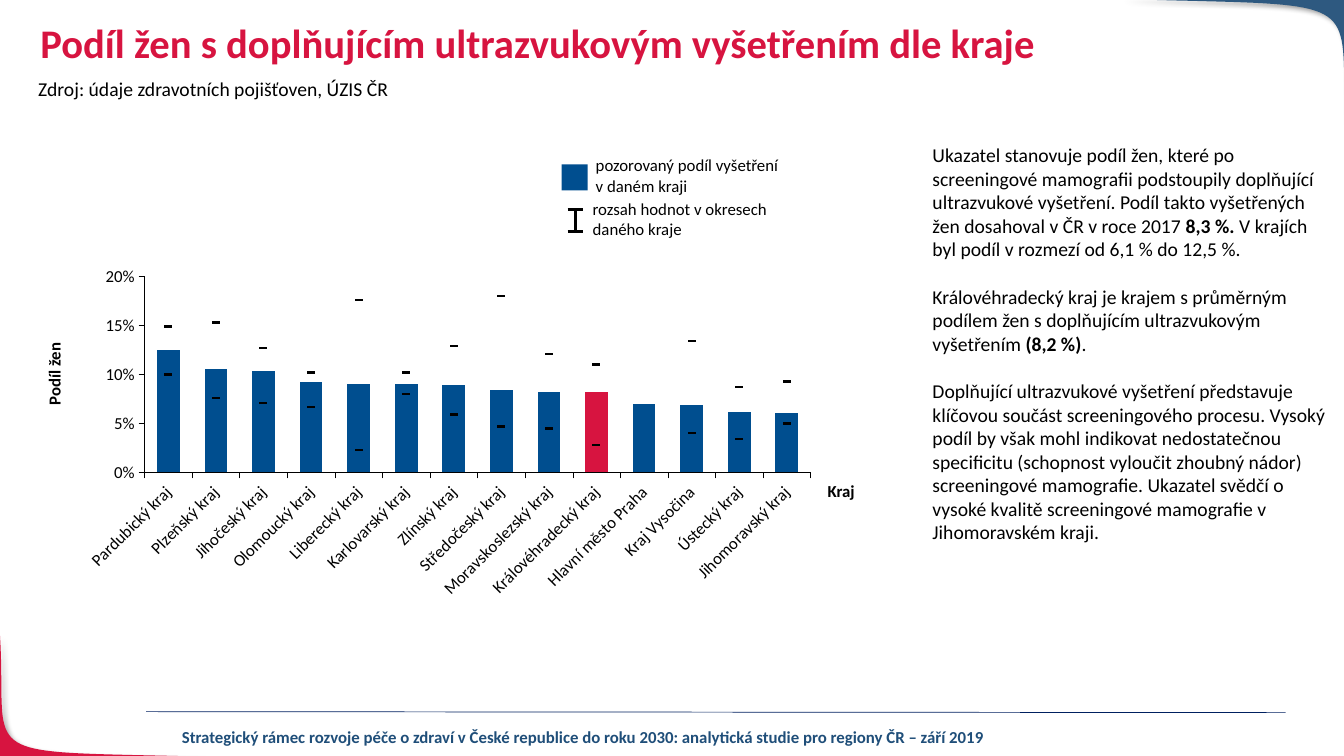
from lxml.etree import SubElement
from pptx import Presentation
from pptx.chart.data import CategoryChartData
from pptx.dml.color import RGBColor
from pptx.enum.chart import XL_CHART_TYPE, XL_MARKER_STYLE, XL_TICK_MARK
from pptx.enum.shapes import MSO_CONNECTOR, MSO_SHAPE
from pptx.enum.text import MSO_ANCHOR, MSO_AUTO_SIZE, PP_ALIGN
from pptx.oxml import parse_xml
from pptx.oxml.ns import nsdecls, qn
from pptx.util import Inches, Pt

FONT = "Calibri"
BLACK, RED, BLUE = "000000", "D71440", "004E8F"
TITLE = "Podíl žen s doplňujícím ultrazvukovým vyšetřením dle kraje"
SOURCE = "Zdroj: údaje zdravotních pojišťoven, ÚZIS ČR"
FOOTER = ("Strategický rámec rozvoje péče o zdraví v České republice do roku 2030: "
          "analytická studie pro regiony ČR – září 2019")
COMMENTARY = [
    [("Ukazatel stanovuje podíl žen, které po screeningové mamografii podstoupily doplňující "
      "ultrazvukové vyšetření. Podíl takto vyšetřených žen dosahoval v ČR v roce 2017 ", False),
     ("8,3 %. ", True),
     ("V krajích byl podíl v rozmezí od 6,1 % do 12,5 %.", False)],
    [("Královéhradecký kraj je krajem s průměrným podílem žen s doplňujícím ultrazvukovým "
      "vyšetřením ", False),
     ("(8,2 %)", True),
     (".", False)],
    [("Doplňující ultrazvukové vyšetření představuje klíčovou součást screeningového procesu. "
      "Vysoký podíl by však mohl indikovat nedostatečnou specificitu (schopnost vyloučit zhoubný "
      "nádor) screeningové mamografie. Ukazatel svědčí o vysoké kvalitě screeningové mamografie "
      "v Jihomoravském kraji.", False)],
]
REGIONS = [
    ("Pardubický kraj", 0.125, 0.1, 0.149),
    ("Plzeňský kraj", 0.106, 0.076, 0.153),
    ("Jihočeský kraj", 0.103, 0.071, 0.127),
    ("Olomoucký kraj", 0.092, 0.067, 0.102),
    ("Liberecký kraj", 0.09, 0.023, 0.176),
    ("Karlovarský kraj", 0.09, 0.08, 0.102),
    ("Zlínský kraj", 0.089, 0.059, 0.129),
    ("Středočeský kraj", 0.084, 0.047, 0.18),
    ("Moravskoslezský kraj", 0.082, 0.045, 0.121),
    ("Královéhradecký kraj", 0.082, 0.028, 0.11),
    ("Hlavní město Praha", 0.07, None, None),
    ("Kraj Vysočina", 0.069, 0.04, 0.134),
    ("Ústecký kraj", 0.062, 0.034, 0.087),
    ("Jihomoravský kraj", 0.061, 0.05, 0.093),
]
HIGHLIGHTED = "Královéhradecký kraj"
PLOT_LAYOUT = {"x": 0.142, "y": 0.029, "w": 0.828, "h": 0.461}
CORNERS = [
    (RED, [(2.13, 7.51), (-0.34, 7.44), (0.08, 7.59), (0, 6.3)], (-0.01, 7.51)),
    ("2E5980", [(11.11, -0.01), (13.7, 0.07), (13.26, -0.1), (13.35, 1.42)], (13.35, -0.01)),
]
RANGE_LINES = [
    (5.71, 2.08, 5.71, 2.3),
    (5.63, 2.08, 5.78, 2.08),
    (5.63, 2.3, 5.78, 2.3),
]


def color(value):
    return RGBColor.from_string(value)


def style_font(font, size, bold=None, value=BLACK):
    font.name, font.size, font.bold = FONT, Pt(size), bold
    font.color.rgb = color(value)


def add_text(shapes, box, runs, size=12, bold=None, value=BLACK, align=PP_ALIGN.LEFT):
    shape = shapes.add_textbox(*map(Inches, box))
    shape.text_frame.word_wrap = True
    paragraph = shape.text_frame.paragraphs[0]
    paragraph.text = runs
    paragraph.alignment = align
    style_font(paragraph.font, size, bold, value)
    return shape


def add_line(shapes, ends, width, value=BLACK):
    line = shapes.add_connector(MSO_CONNECTOR.STRAIGHT, *map(Inches, ends))
    line.line.color.rgb = color(value)
    line.line.width = Pt(width)
    SubElement(line._element.spPr, qn("a:effectLst"))


def curve_point(controls, t):
    weights = ((1 - t) ** 3, 3 * t * (1 - t) ** 2, 3 * t ** 2 * (1 - t), t ** 3)
    return tuple(Inches(sum(w * point[axis] for w, point in zip(weights, controls)))
                 for axis in (0, 1))


def add_corner(shapes, fill, controls, corner):
    points = [curve_point(controls, step / 40) for step in range(41)]
    builder = shapes.build_freeform(*points[0])
    builder.add_line_segments(points[1:] + [tuple(map(Inches, corner))], close=True)
    shape = builder.convert_to_shape()
    shape.fill.solid()
    shape.fill.fore_color.rgb = color(fill)
    shape.line.fill.background()
    shape._element.spPr.append(parse_xml(
        f'<a:effectLst {nsdecls("a")}><a:outerShdw blurRad="{Pt(4)}" dist="{Pt(3)}" dir="2700000">'
        '<a:srgbClr val="000000"><a:alpha val="40000"/></a:srgbClr></a:outerShdw></a:effectLst>'))


def move_ranges_to_lines(chart):
    plot_area = chart._chartSpace.chart.plotArea
    bars = plot_area.find(qn("c:barChart"))
    lines = parse_xml(f'<c:lineChart {nsdecls("c")}><c:grouping val="standard"/>'
                      '<c:varyColors val="0"/></c:lineChart>')
    for series in bars.findall(qn("c:ser"))[1:]:
        for invert in series.findall(qn("c:invertIfNegative")):
            series.remove(invert)
        lines.append(series)
    SubElement(lines, qn("c:marker")).set("val", "1")
    for axis in bars.findall(qn("c:axId")):
        SubElement(lines, qn("c:axId")).set("val", axis.get("val"))
    bars.addnext(lines)
    for layout in plot_area.findall(qn("c:layout")):
        plot_area.remove(layout)
    sizes = "".join(f'<c:{key} val="{value}"/>' for key, value in PLOT_LAYOUT.items())
    plot_area.insert(0, parse_xml(
        f'<c:layout {nsdecls("c")}><c:manualLayout><c:layoutTarget val="inner"/>'
        f'<c:xMode val="edge"/><c:yMode val="edge"/>{sizes}</c:manualLayout></c:layout>'))


def add_region_chart(shapes):
    names, *columns = zip(*REGIONS)
    data = CategoryChartData(number_format="0.0%")
    data.categories = names
    for number, values in enumerate(columns, 1):
        data.add_series(f"Series {number}", values)
    chart = shapes.add_chart(XL_CHART_TYPE.COLUMN_CLUSTERED, Inches(0.3), Inches(2.62),
                             Inches(7.98), Inches(4.22), data).chart
    chart.has_legend = chart.has_title = False
    style_font(chart.font, 13.1, True)
    chart.font.name = "TeX Gyre Schola"
    for axis in (chart.category_axis, chart.value_axis):
        axis.has_major_gridlines = False
        axis.major_tick_mark = XL_TICK_MARK.OUTSIDE
        axis.minor_tick_mark = XL_TICK_MARK.NONE
        axis.format.line.color.rgb = color(BLACK)
        axis.format.line.width = Pt(0.25)
        style_font(axis.tick_labels.font, 12, False)
    chart.category_axis._element.find(qn("c:txPr")).find(qn("a:bodyPr")).set("rot", "-2700000")
    value_axis = chart.value_axis
    value_axis.minimum_scale, value_axis.maximum_scale = 0, 0.2
    value_axis.major_unit = 0.05
    value_axis.tick_labels.number_format = "0%"
    value_axis.tick_labels.number_format_is_linked = False
    move_ranges_to_lines(chart)
    bars, ranges = chart.plots
    bars.gap_width = 110
    bars.vary_by_categories = False
    shares = bars.series[0]
    highlighted = shares.points[names.index(HIGHLIGHTED)]
    for part, value in ((shares, BLUE), (highlighted, RED)):
        part.format.fill.solid()
        part.format.fill.fore_color.rgb = color(value)
    for series in ranges.series:
        series.smooth = False
        series.format.line.fill.background()
        series.marker.style = XL_MARKER_STYLE.DASH
        series.marker.size = 5
        series.marker.format.fill.solid()
        series.marker.format.fill.fore_color.rgb = color(BLACK)
        series.marker.format.line.color.rgb = color(BLACK)


def add_legend(shapes):
    for ends in RANGE_LINES:
        add_line(shapes, ends, 2.25)
    add_text(shapes, (5.78, 1.92, 2.32, 0.5), "rozsah hodnot v okresech daného kraje")
    swatch = shapes.add_shape(MSO_SHAPE.RECTANGLE, *map(Inches, (5.57, 1.63, 0.26, 0.26)))
    swatch.shadow.inherit = False
    swatch.fill.solid()
    swatch.fill.fore_color.rgb = color(BLUE)
    swatch.line.fill.background()
    add_text(shapes, (5.81, 1.49, 2.32, 0.5), "pozorovaný podíl vyšetření\vv daném kraji")


def add_commentary(shapes):
    frame = add_text(shapes, (9.15, 1.37, 4.18, 4.34), "", 14).text_frame
    for index, runs in enumerate(COMMENTARY):
        paragraph = frame.add_paragraph() if index else frame.paragraphs[0]
        if index:
            paragraph.space_before = Pt(17)
        style_font(paragraph.font, 14)
        for text, bold in runs:
            run = paragraph.add_run()
            run.text, run.font.bold = text, bold


def format_title(title):
    title.left, title.top, title.width, title.height = map(Inches, (0.3, 0.18, 11.5, 0.69))
    frame = title.text_frame
    frame.text = TITLE
    frame.auto_size = MSO_AUTO_SIZE.NONE
    frame.vertical_anchor = MSO_ANCHOR.TOP
    paragraph = frame.paragraphs[0]
    paragraph.alignment = PP_ALIGN.LEFT
    paragraph.line_spacing = 0.9
    style_font(paragraph.font, 29, True, RED)


def main():
    presentation = Presentation()
    presentation.slide_width, presentation.slide_height = Inches(13.33), Inches(7.5)
    slide = presentation.slides.add_slide(presentation.slide_layouts[5])
    shapes = slide.shapes
    for corner in CORNERS:
        add_corner(shapes, *corner)
    add_line(shapes, (1.45, 7.06, 12.75, 7.07), 0.5, "002060")
    add_text(shapes, (1.57, 7.16, 8.43, 0.3), FOOTER, 12, True, "1F4E79", PP_ALIGN.CENTER)
    add_region_chart(shapes)
    add_legend(shapes.add_group_shape().shapes)
    axis_title = add_text(shapes, (-0.28, 3.54, 1.67, 0.34), "Podíl žen", bold=True,
                          align=PP_ALIGN.CENTER)
    axis_title.rotation = 270
    add_text(shapes, (8.11, 4.72, 1.08, 0.28), "Kraj", bold=True)
    add_text(shapes, (0.28, 0.71, 8.47, 0.34), SOURCE, 14)
    format_title(shapes.title)
    add_commentary(shapes)
    presentation.save("out.pptx")


if __name__ == "__main__":
    main()
